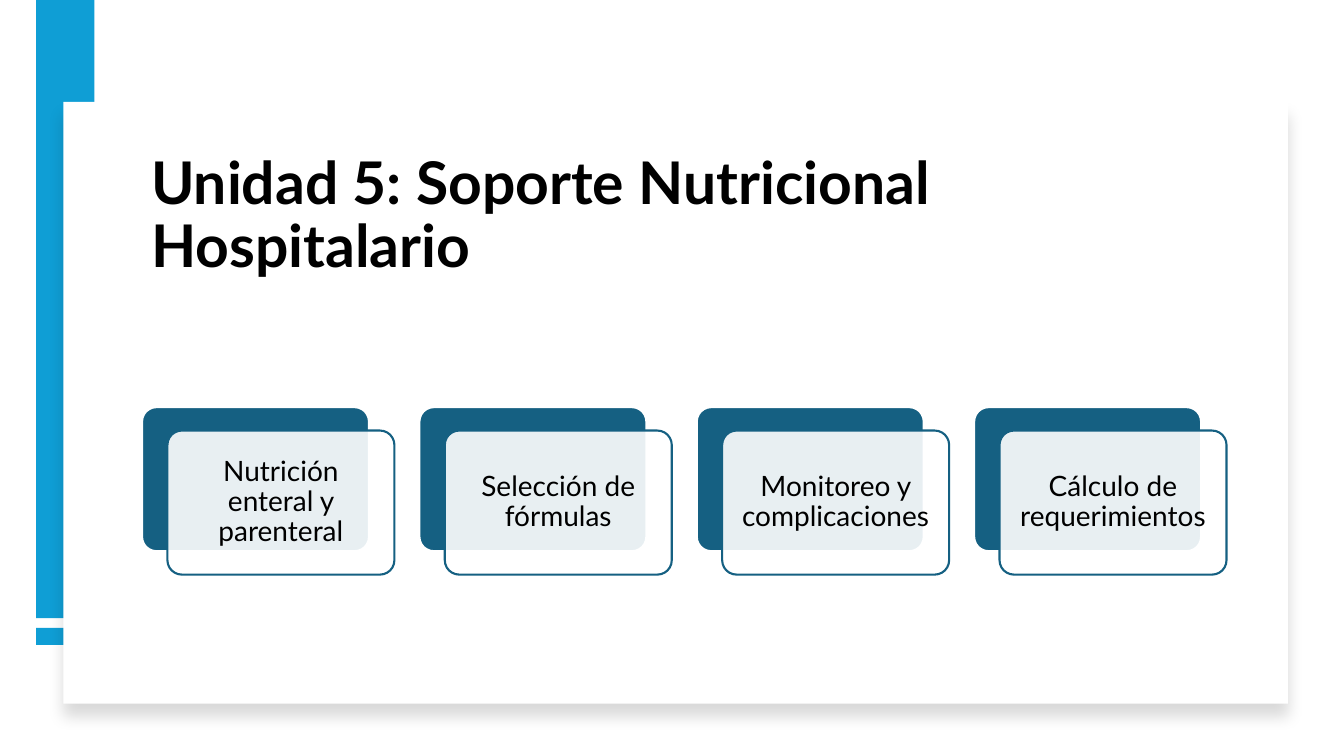
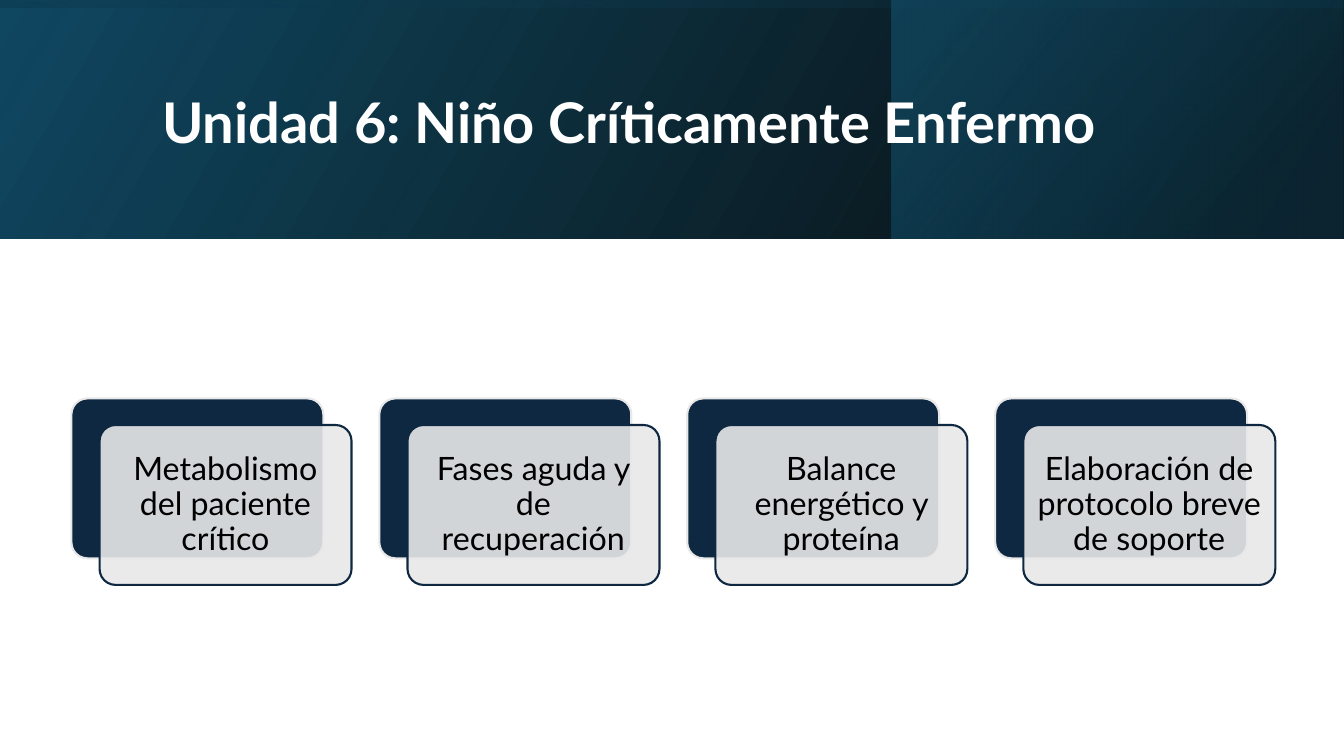
from lxml import etree
from pptx import Presentation
from pptx import util as u
from pptx.dml.color import RGBColor
from pptx.enum import shapes, text
from pptx.oxml.ns import qn

FONT = "Lato"
C = {"white": "FFFFFF", "black": "000000", "sky": "0F9ED5", "teal": "156082",
     "navy": "0E2841", "grey": "E8E8E8", "deep": "104862", "dark": "0B3041"}
RECT = shapes.MSO_SHAPE.RECTANGLE
ROUND = shapes.MSO_SHAPE.ROUNDED_RECTANGLE


def add_box(s, kind, box, fill=None, line=None, alpha=100):
    """Add a shape without shadow; box is left, top, width, height in cm."""
    sp = s.shapes.add_shape(kind, *[u.Cm(v) for v in box])
    sp.shadow.inherit = False
    if kind == ROUND:
        sp.adjustments[0] = 0.1
    if fill:
        sp.fill.solid()
        sp.fill.fore_color.rgb = RGBColor.from_string(C[fill])
        if alpha < 100:
            clr = sp.element.spPr.find(qn("a:solidFill"))[0]
            etree.SubElement(clr, qn("a:alpha"), val=str(alpha * 1000))
    if line:
        sp.line.color.rgb = RGBColor.from_string(C[line])
        sp.line.width = u.Pt(1.5)
    else:
        sp.line.fill.background()
    return sp


def add_text(sp, words, size, color, anchor, align, bold=False):
    tf = sp.text_frame
    tf.word_wrap = True
    tf.vertical_anchor = anchor
    p = tf.paragraphs[0]
    p.alignment = align
    p.line_spacing = 0.9
    r = p.add_run()
    r.text = words
    r.font.name = FONT
    r.font.size = u.Pt(size)
    r.font.bold = bold
    r.font.color.rgb = RGBColor.from_string(C[color])


prs = Presentation()
prs.slide_width, prs.slide_height = u.Cm(33.87), u.Cm(19.05)
unit5, unit6 = [prs.slides.add_slide(prs.slide_layouts[6]) for _ in range(2)]

# Unit 5: blue bars behind a white panel with a soft shadow
add_box(unit5, RECT, (0.91, 15.82, 1.47, 0.43), "sky")
add_box(unit5, RECT, (0.91, 0, 1.47, 15.58), "sky")
panel = add_box(unit5, RECT, (1.6, 2.57, 30.86, 15.16), "white")
shadow = etree.SubElement(panel.element.spPr.find(qn("a:effectLst")), qn("a:outerShdw"),
                          blurRad=str(u.Pt(11)), dist=str(u.Pt(10)), dir="5400000",
                          algn="t", rotWithShape="0")
shadow_color = etree.SubElement(shadow, qn("a:srgbClr"), val=C["black"])
etree.SubElement(shadow_color, qn("a:alpha"), val="15000")

# Unit 6: header of three mirrored gradients; stops are position, colour, opacity
bands = [
    ((0, 0, 33.87, 6.02), 0, 30, [(0, "black", 96), (100, "deep", 100)]),
    ((22.46, 0, 11.39, 6.02), 0, 40, [(19, "dark", 68), (100, "teal", 48)]),
    ((13.92, -13.92, 6.02, 33.87), 270, 10, [(23, "deep", 16), (99, "black", 45)]),
]
for box, rotation, angle, stops in bands:
    band = add_box(unit6, RECT, box)
    band.rotation = rotation
    band.element.spPr.find(qn("a:xfrm")).set("flipH", "1")
    band.fill.gradient()
    band.fill.gradient_angle = angle
    for stop, (position, color, alpha) in zip(band.fill.gradient_stops, stops):
        stop.position = position / 100
        stop.color.rgb = RGBColor.from_string(C[color])
    for clr, (position, color, alpha) in zip(band.element.spPr.iter(qn("a:srgbClr")), stops):
        etree.SubElement(clr, qn("a:alpha"), val=str(alpha * 1000))

# Titles
titles = [
    (unit5, "Unidad 5: Soporte Nutricional Hospitalario", (3.56, 3.43, 27.36, 3.76),
     42, "black", text.MSO_ANCHOR.BOTTOM),
    (unit6, "Unidad 6: Niño Críticamente Enfermo", (3.84, 0.97, 27, 4.37),
     40, "white", text.MSO_ANCHOR.MIDDLE),
]
for s, words, box, size, color, anchor in titles:
    title = s.shapes.add_textbox(*[u.Cm(v) for v in box])
    add_text(title, words, size, color, anchor, text.PP_ALIGN.LEFT, bold=True)

# Topic cards: first back card, pitch, offset of the front card, inset, text size, colours
card_rows = [
    (unit5, (3.58, 10.26, 5.72, 3.63), 6.99, (0.64, 0.59), 0.2, 20, "teal", "white",
     ["Nutrición enteral y parenteral", "Selección de fórmulas",
      "Monitoreo y complicaciones", "Cálculo de requerimientos"]),
    (unit6, (1.8, 10.04, 6.35, 4.03), 7.76, (0.71, 0.67), 0.23, 23, "navy", "grey",
     ["Metabolismo del paciente crítico", "Fases aguda y de recuperación",
      "Balance energético y proteína", "Elaboración de protocolo breve de soporte"]),
]
for s, (left, top, w, h), pitch, (dx, dy), inset, size, main, pale, topics in card_rows:
    for i, topic in enumerate(topics):
        x = left + i * pitch
        add_box(s, ROUND, (x, top, w, h), main, pale)
        card = add_box(s, ROUND, (x + dx, top + dy, w, h), pale, main, alpha=90)
        tf = card.text_frame
        tf.margin_left = tf.margin_right = tf.margin_top = tf.margin_bottom = u.Cm(inset)
        add_text(card, topic, size, "black", text.MSO_ANCHOR.MIDDLE, text.PP_ALIGN.CENTER)

prs.save("out.pptx")
